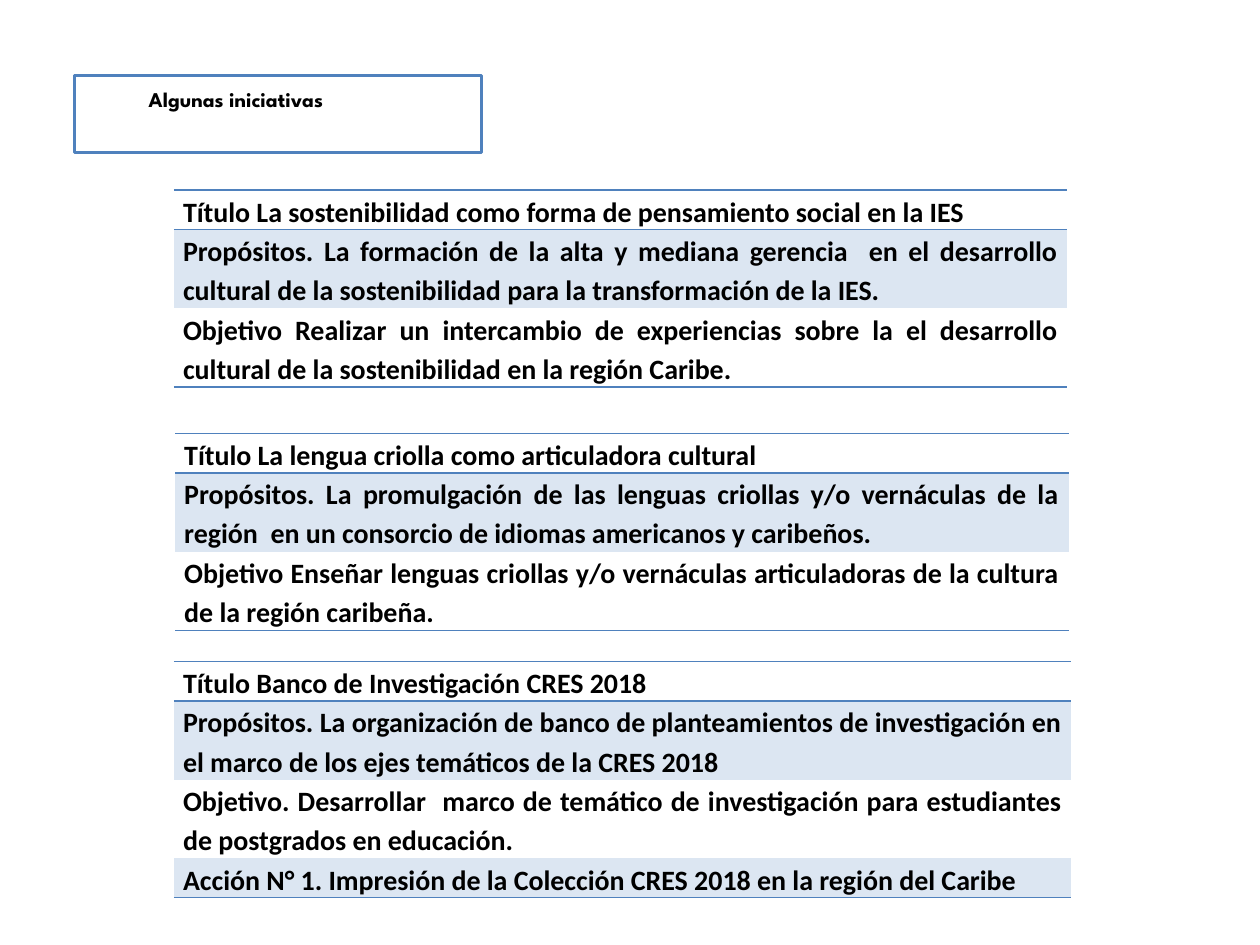
from lxml import etree
from pptx import Presentation
from pptx import util as u
from pptx.dml import color
from pptx.enum import text
from pptx.oxml import ns

TITLE = "Algunas iniciativas"
INITIATIVES = [
    {"left": 99.4, "top": 108.7, "width": 510.5, "rows": [
        ("Título La sostenibilidad como forma de pensamiento social en la IES", 1),
        ("Propósitos. La formación de la alta y mediana gerencia  en el desarrollo "
         "cultural de la sostenibilidad para la transformación de la IES.", 2),
        ("Objetivo Realizar un intercambio de experiencias sobre la el desarrollo "
         "cultural de la sostenibilidad en la región Caribe.", 2),
    ]},
    {"left": 100.1, "top": 247.7, "width": 510.5, "rows": [
        ("Título La lengua criolla como articuladora cultural", 1),
        ("Propósitos. La promulgación de las lenguas criollas y/o vernáculas de la "
         "región  en un consorcio de idiomas americanos y caribeños.", 2),
        ("Objetivo Enseñar lenguas criollas y/o vernáculas articuladoras de la cultura "
         "de la región caribeña.", 2),
    ]},
    {"left": 99.4, "top": 378, "width": 512.6, "rows": [
        ("Título Banco de Investigación CRES 2018", 1),
        ("Propósitos. La organización de banco de planteamientos de investigación en "
         "el marco de los ejes temáticos de la CRES 2018", 2),
        ("Objetivo. Desarrollar  marco de temático de investigación para estudiantes "
         "de postgrados en educación.", 2),
        ("Acción N° 1. Impresión de la Colección CRES 2018 en la región del Caribe", 1),
    ]},
]
BLUE, BAND, WHITE, BLACK = "4F81BD", "DCE6F2", "FFFFFF", "000000"
LINE_HEIGHT = 22.2


def rgb(value):
    return color.RGBColor.from_string(value)


def set_font(paragraph, name, size):
    font = paragraph.font
    font.name, font.size, font.bold = name, u.Pt(size), True
    font.color.rgb = rgb(BLACK)


def set_borders(cell, ruled_sides):
    properties = cell._tc.get_or_add_tcPr()
    for side in "LRTB":
        line = etree.SubElement(properties, ns.qn(f"a:ln{side}"), w=str(u.Pt(1)))
        if side in ruled_sides:
            fill = etree.SubElement(line, ns.qn("a:solidFill"))
            etree.SubElement(fill, ns.qn("a:srgbClr"), val=BLUE)
        else:
            etree.SubElement(line, ns.qn("a:noFill"))


def add_title(slide):
    title = slide.shapes.title
    title.left, title.top, title.width, title.height = map(u.Pt, (42.5, 43.2, 232.6, 43.9))
    title.fill.solid()
    title.fill.fore_color.rgb = rgb(WHITE)
    title.line.color.rgb = rgb(BLUE)
    title.line.width = u.Pt(2)
    frame = title.text_frame
    frame.text = TITLE
    frame.auto_size = text.MSO_AUTO_SIZE.NONE
    frame.vertical_anchor = text.MSO_ANCHOR.TOP
    frame.margin_left, frame.margin_top = u.Pt(42.5), u.Pt(6.5)
    paragraph = frame.paragraphs[0]
    paragraph.alignment = text.PP_ALIGN.LEFT
    set_font(paragraph, "League Spartan", 12)


def add_initiative(slide, left, top, width, rows):
    height = LINE_HEIGHT * sum(lines for _, lines in rows)
    table = slide.shapes.add_table(
        len(rows), 1, *map(u.Pt, (left, top, width, height))).table
    table.first_row = table.horz_banding = False
    for index, (content, lines) in enumerate(rows):
        table.rows[index].height = u.Pt(LINE_HEIGHT * lines)
        cell = table.cell(index, 0)
        cell.text = content
        cell.margin_left = cell.margin_right = u.Pt(5.2)
        cell.margin_top = cell.margin_bottom = 0
        sides = "TB" if index == 0 else "T" if index == 1 else ""
        set_borders(cell, sides + ("B" if index == len(rows) - 1 else ""))
        if index % 2:
            cell.fill.solid()
            cell.fill.fore_color.rgb = rgb(BAND)
        else:
            cell.fill.background()
        paragraph = cell.text_frame.paragraphs[0]
        paragraph.alignment = text.PP_ALIGN.JUSTIFY
        paragraph.line_spacing = 1.15
        set_font(paragraph, "Calibri", 16)


def main():
    presentation = Presentation()
    presentation.slide_width, presentation.slide_height = u.Pt(720), u.Pt(540)
    slide = presentation.slides.add_slide(presentation.slide_layouts[5])
    add_title(slide)
    for initiative in INITIATIVES:
        add_initiative(slide, **initiative)
    presentation.save("out.pptx")


if __name__ == "__main__":
    main()
